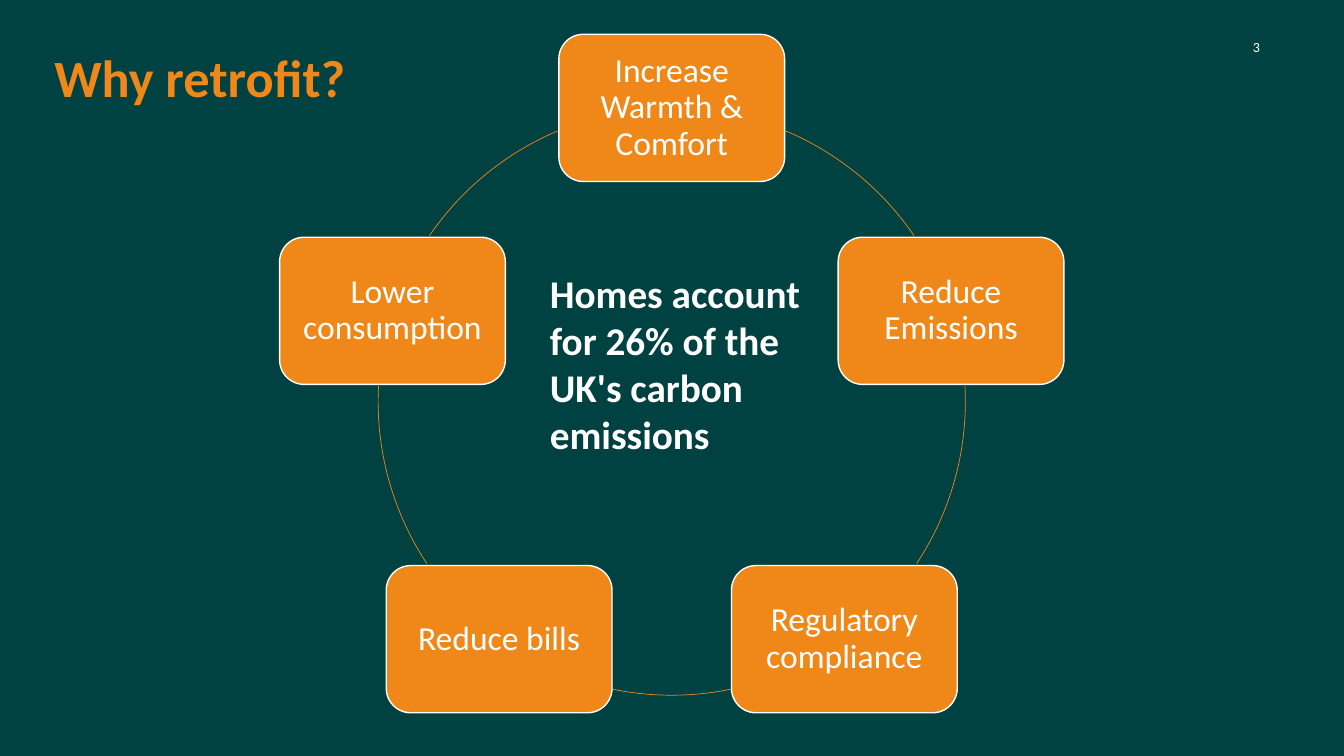
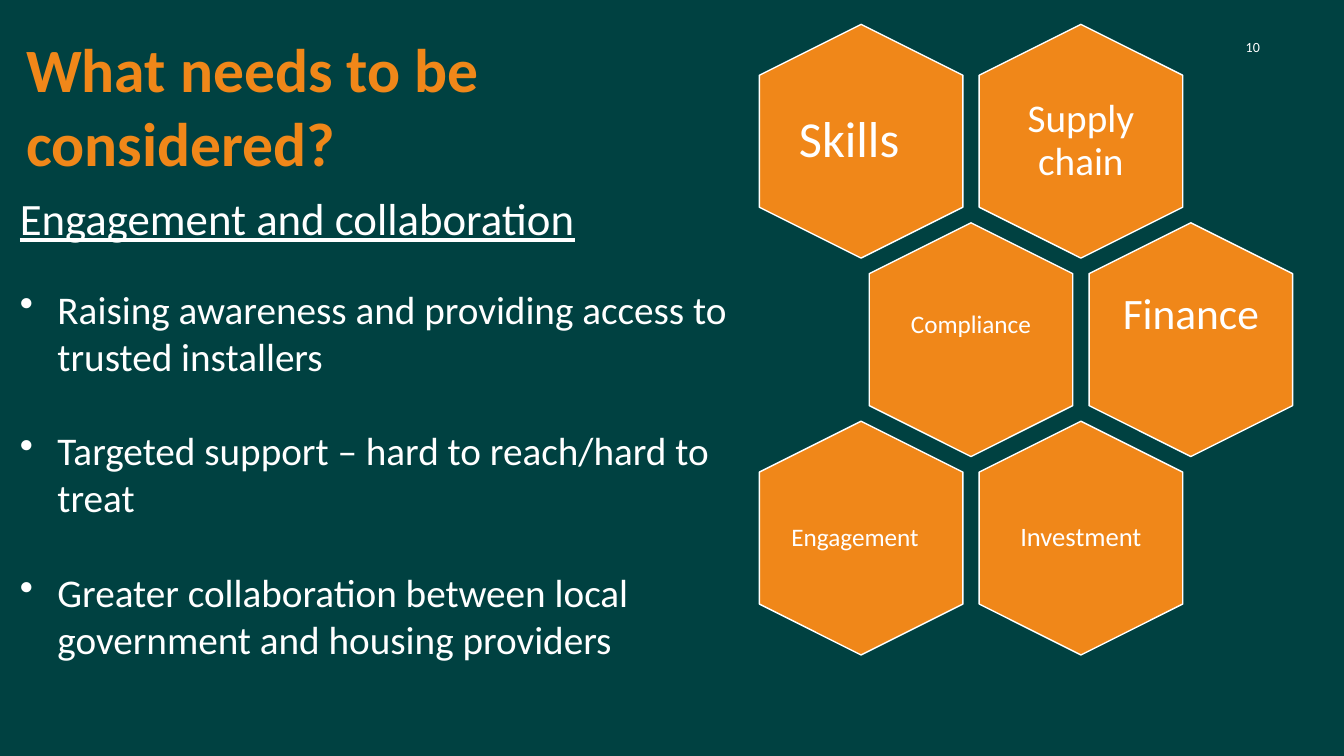
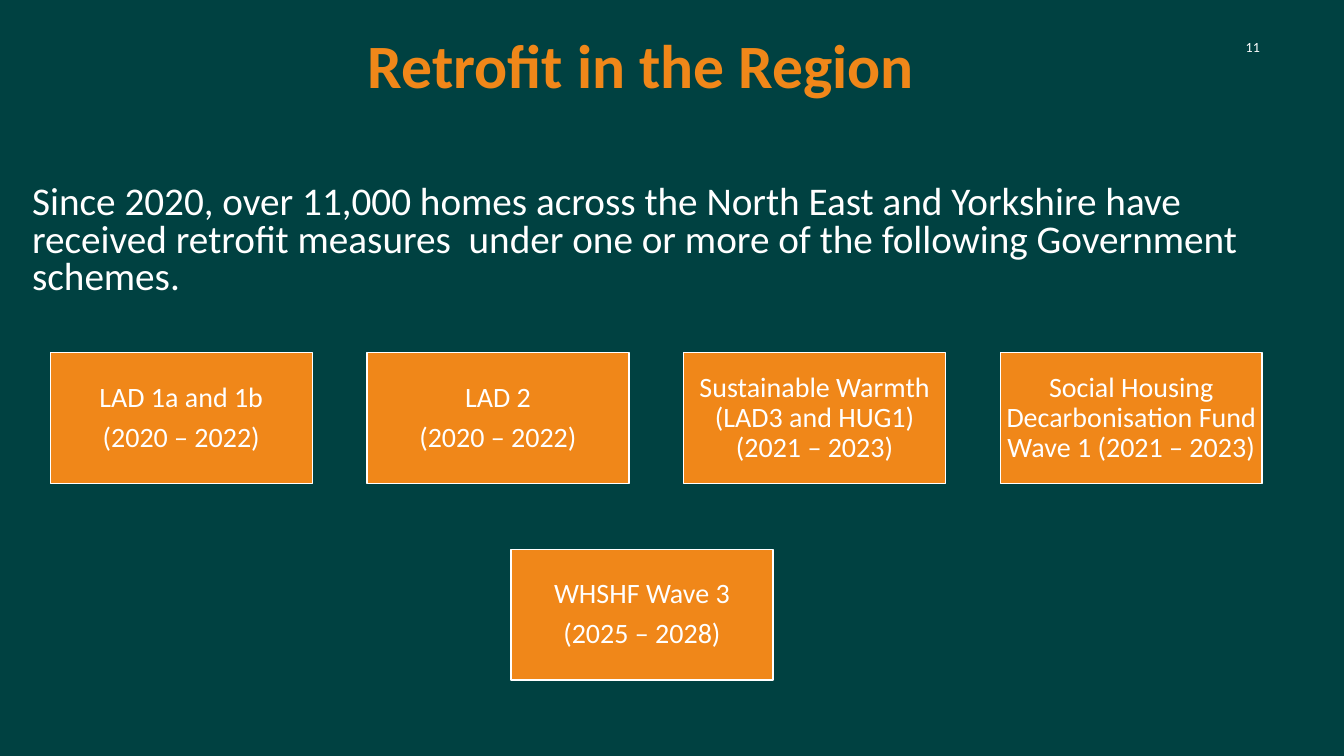
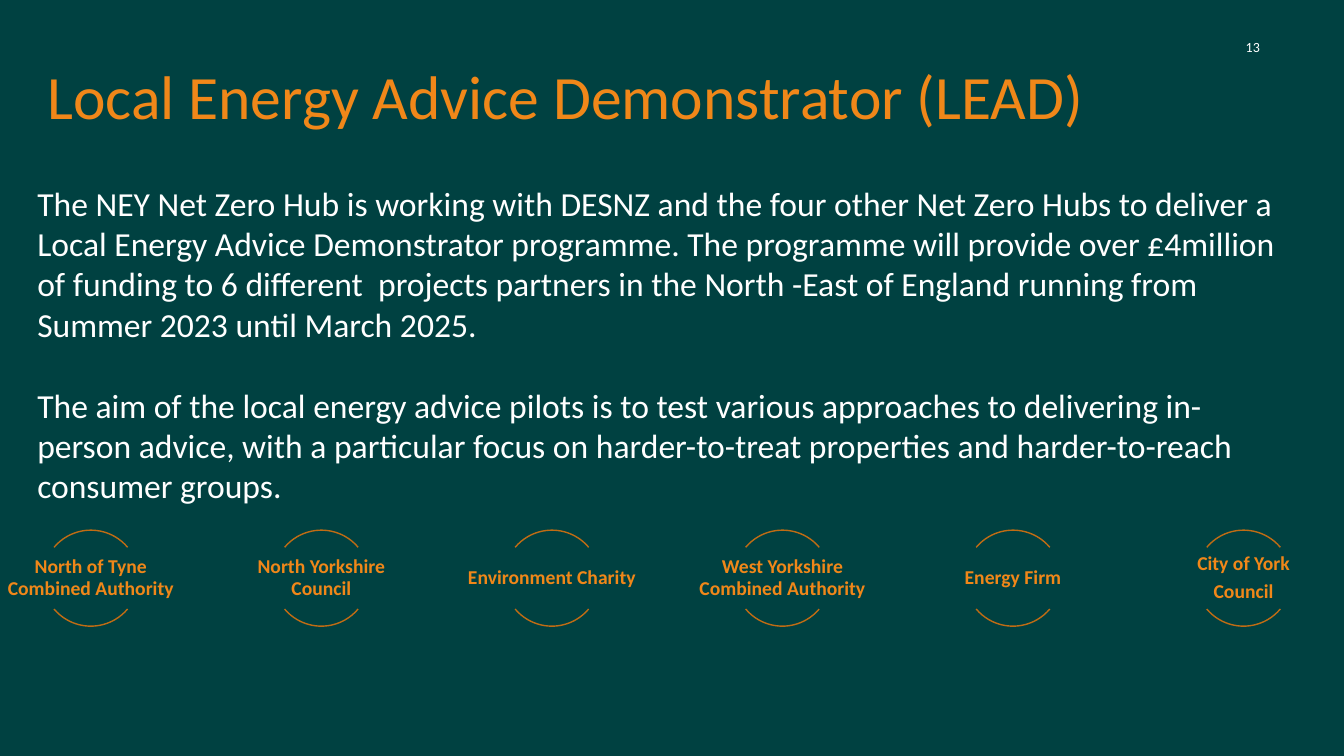
from math import cos, radians, sin

from pptx import Presentation
from pptx.dml.color import RGBColor
from pptx.enum.shapes import MSO_SHAPE
from pptx.enum.text import MSO_ANCHOR, PP_ALIGN
from pptx.oxml.xmlchemy import OxmlElement
from pptx.util import Cm, Pt

TEAL = RGBColor(0x00, 0x41, 0x41)
ORANGE = RGBColor(0xF0, 0x87, 0x19)
DARK_ORANGE = RGBColor(0xC0, 0x6C, 0x14)
WHITE = RGBColor(0xFF, 0xFF, 0xFF)
FONT = "Calibri"
TEXT_INSETS = (0.25, 0.13)


def write_text(shape, text, size, color=WHITE, bold=False, align=PP_ALIGN.LEFT,
               anchor=MSO_ANCHOR.TOP, insets=(0, 0), spacing=1.0, gap=0):
    frame = shape.text_frame
    frame.word_wrap = True
    frame.vertical_anchor = anchor
    frame.margin_left = frame.margin_right = Cm(insets[0])
    frame.margin_top = frame.margin_bottom = Cm(insets[1])
    frame.text = text
    for index, paragraph in enumerate(frame.paragraphs):
        paragraph.alignment = align
        paragraph.line_spacing = spacing
        if index:
            paragraph.space_before = Pt(gap)
        for run in paragraph.runs:
            run.font.name = FONT
            run.font.size = Pt(size)
            run.font.bold = bold
            run.font.color.rgb = color


def add_text(slide, left, top, width, height, text, size, **style):
    box = slide.shapes.add_textbox(Cm(left), Cm(top), Cm(width), Cm(height))
    write_text(box, text, size, **style)
    return box


def add_label(slide, center_x, center_y, width, height, text, size, **style):
    add_text(slide, center_x - width / 2, center_y - height / 2, width, height,
             text, size, align=PP_ALIGN.CENTER, anchor=MSO_ANCHOR.MIDDLE,
             spacing=0.9, **style)


def add_title(slide, left, top, width, height, text, size=44, bold=True, **style):
    add_text(slide, left, top, width, height, text, size,
             color=ORANGE, bold=bold, **style)


def add_box(slide, kind, left, top, width, height):
    shape = slide.shapes.add_shape(kind, Cm(left), Cm(top), Cm(width), Cm(height))
    shape.shadow.inherit = False
    shape.fill.solid()
    shape.fill.fore_color.rgb = ORANGE
    shape.line.color.rgb = WHITE
    shape.line.width = Pt(1)
    return shape


def add_labelled_box(slide, kind, left, top, width, height, text, size, inset):
    box = add_box(slide, kind, left, top, width, height)
    write_text(box, text, size, align=PP_ALIGN.CENTER, anchor=MSO_ANCHOR.MIDDLE,
               insets=(inset, inset), spacing=0.9, gap=size * 0.35)


def add_arc(slide, center_x, center_y, radius, start, end, color, weight):
    arc = slide.shapes.add_shape(MSO_SHAPE.ARC, Cm(center_x - radius),
                                 Cm(center_y - radius), Cm(2 * radius), Cm(2 * radius))
    arc.shadow.inherit = False
    arc.adjustments[0] = start * 0.6
    arc.adjustments[1] = end * 0.6
    arc.fill.background()
    arc.line.color.rgb = color
    arc.line.width = Pt(weight)


def add_bullet(paragraph, indent):
    properties = paragraph._p.get_or_add_pPr()
    properties.set("marL", str(Cm(indent)))
    properties.set("indent", str(-Cm(indent)))
    bullet = OxmlElement("a:buChar")
    bullet.set("char", "•")
    properties.append(bullet)


def add_numbered_slide(presentation, number):
    slide = presentation.slides.add_slide(presentation.slide_layouts[6])
    add_text(slide, 24.59, 0.97, 7.16, 0.43, str(number), 10, align=PP_ALIGN.RIGHT)
    return slide


def build_reasons(presentation):
    slide = add_numbered_slide(presentation, 3)
    center_x, center_y, radius = 16.93, 10.12, 7.4
    width, height = 5.69, 3.71
    reasons = [
        ("Increase Warmth & Comfort", 292.9, 325.6),
        ("Reduce Emissions", 357, 33.5),
        ("Regulatory compliance", 78.4, 101.6),
        ("Reduce bills", 146.5, 183),
        ("Lower consumption", 214.4, 247.1),
    ]
    for index, (reason, start, end) in enumerate(reasons):
        angle = radians(index * 360 / len(reasons) - 90)
        add_labelled_box(slide, MSO_SHAPE.ROUNDED_RECTANGLE,
                         center_x + radius * cos(angle) - width / 2,
                         center_y + radius * sin(angle) - height / 2,
                         width, height, reason, 24, 0.25)
        add_arc(slide, center_x, center_y, radius, start, end, ORANGE, 0.5)
    add_title(slide, 1.37, 1.15, 8.97, 1.8, "Why retrofit?", size=37.4)
    add_text(slide, 13.61, 6.65, 7.44, 5.2,
             "Homes account for 26% of the UK's carbon emissions", 28,
             bold=True, insets=TEXT_INSETS)


def build_considerations(presentation):
    slide = add_numbered_slide(presentation, 10)
    body = add_text(slide, 0.25, 4.67, 19.96, 12.5, "\n".join([
        "Engagement and collaboration",
        "Raising awareness and providing access to trusted installers",
        "Targeted support – hard to reach/hard to treat",
        "Greater collaboration between local government and housing providers",
    ]), 28, insets=TEXT_INSETS, gap=34)
    heading, *bullets = body.text_frame.paragraphs
    heading.runs[0].font.size = Pt(32)
    heading.runs[0].font.underline = True
    for paragraph in bullets:
        add_bullet(paragraph, 0.95)
    bullets[0].space_before = Pt(29)
    add_title(slide, 0.41, 0.66, 19.02, 4.01, "What needs to be considered?",
              insets=TEXT_INSETS)

    width, height = 5.89, 5.13
    hexagons = [
        (0, 0, "Skills", 36, -0.3, 0),
        (0, 1, "Supply chain", 28, 0, 0),
        (1, 0.5, "Compliance", 18, 0, -0.35),
        (1, 1.5, "Finance", 31, 0, -0.6),
        (2, 0, "Engagement", 18, -0.15, 0),
        (2, 1, "Investment", 19, 0, 0),
    ]
    for row, column, topic, size, shift_x, shift_y in hexagons:
        center_x = 21.7 + column * 5.54
        center_y = 3.56 + row * 5.0
        hexagon = add_box(slide, MSO_SHAPE.HEXAGON, center_x - width / 2,
                          center_y - height / 2, width, height)
        hexagon.rotation = 90
        add_label(slide, center_x + shift_x, center_y + shift_y, 3.53, 4.06,
                  topic, size)


def build_schemes(presentation):
    slide = add_numbered_slide(presentation, 11)
    add_title(slide, 9.27, 0.89, 18.06, 2.49, "Retrofit in the Region", spacing=0.9)
    add_text(slide, 0.81, 4.67, 32.26, 3,
             "Since 2020, over 11,000 homes across the North East and Yorkshire have "
             "received retrofit measures  under one or more of the following "
             "Government schemes.", 28, spacing=0.8)
    schemes = [
        "LAD 1a and 1b\n(2020 – 2022)",
        "LAD 2\n(2020 – 2022)",
        "Sustainable Warmth (LAD3 and HUG1) (2021 – 2023)",
        "Social Housing Decarbonisation Fund Wave 1 (2021 – 2023)",
    ]
    places = [(1.27 + index * 7.98, 8.89, scheme)
              for index, scheme in enumerate(schemes)]
    places.append((12.88, 13.84, "WHSHF Wave 3\n(2025 – 2028)"))
    for left, top, scheme in places:
        add_labelled_box(slide, MSO_SHAPE.RECTANGLE, left, top, 6.6, 3.3,
                         scheme, 20, 0.03)


def build_demonstrator(presentation):
    slide = add_numbered_slide(presentation, 13)
    add_text(slide, 0.69, 4.47, 32.03, 8.6, "\n".join([
        "The NEY Net Zero Hub is working with DESNZ and the four other Net Zero Hubs "
        "to deliver a Local Energy Advice Demonstrator programme. The programme will "
        "provide over £4million of funding to 6 different  projects partners in the "
        "North -East of England running from Summer 2023 until March 2025.",
        "The aim of the local energy advice pilots is to test various approaches to "
        "delivering in-person advice, with a particular focus on harder-to-treat "
        "properties and harder-to-reach consumer groups.",
    ]), 24, insets=TEXT_INSETS, gap=29)
    add_title(slide, 0.94, 1.32, 27.71, 2.13, "Local Energy Advice Demonstrator (LEAD)",
              bold=False, insets=TEXT_INSETS)
    partners = [
        "North of Tyne Combined Authority",
        "North Yorkshire Council",
        "Environment Charity",
        "West Yorkshire Combined Authority",
        "Energy Firm",
        "City of York\nCouncil",
    ]
    for index, partner in enumerate(partners):
        center_x, center_y = 2.29 + index * 5.81, 14.57
        for start, end in ((220, 320), (40, 140)):
            add_arc(slide, center_x, center_y, 1.21, start, end, DARK_ORANGE, 1)
        add_label(slide, center_x, center_y, 4.8, 1.52, partner, 14,
                  color=ORANGE, bold=True, insets=(0.03, 0.03), gap=5)


def main():
    presentation = Presentation()
    presentation.slide_width = Cm(33.87)
    presentation.slide_height = Cm(19.05)
    background = presentation.slide_master.background.fill
    background.solid()
    background.fore_color.rgb = TEAL
    build_reasons(presentation)
    build_considerations(presentation)
    build_schemes(presentation)
    build_demonstrator(presentation)
    presentation.save("out.pptx")


if __name__ == "__main__":
    main()
